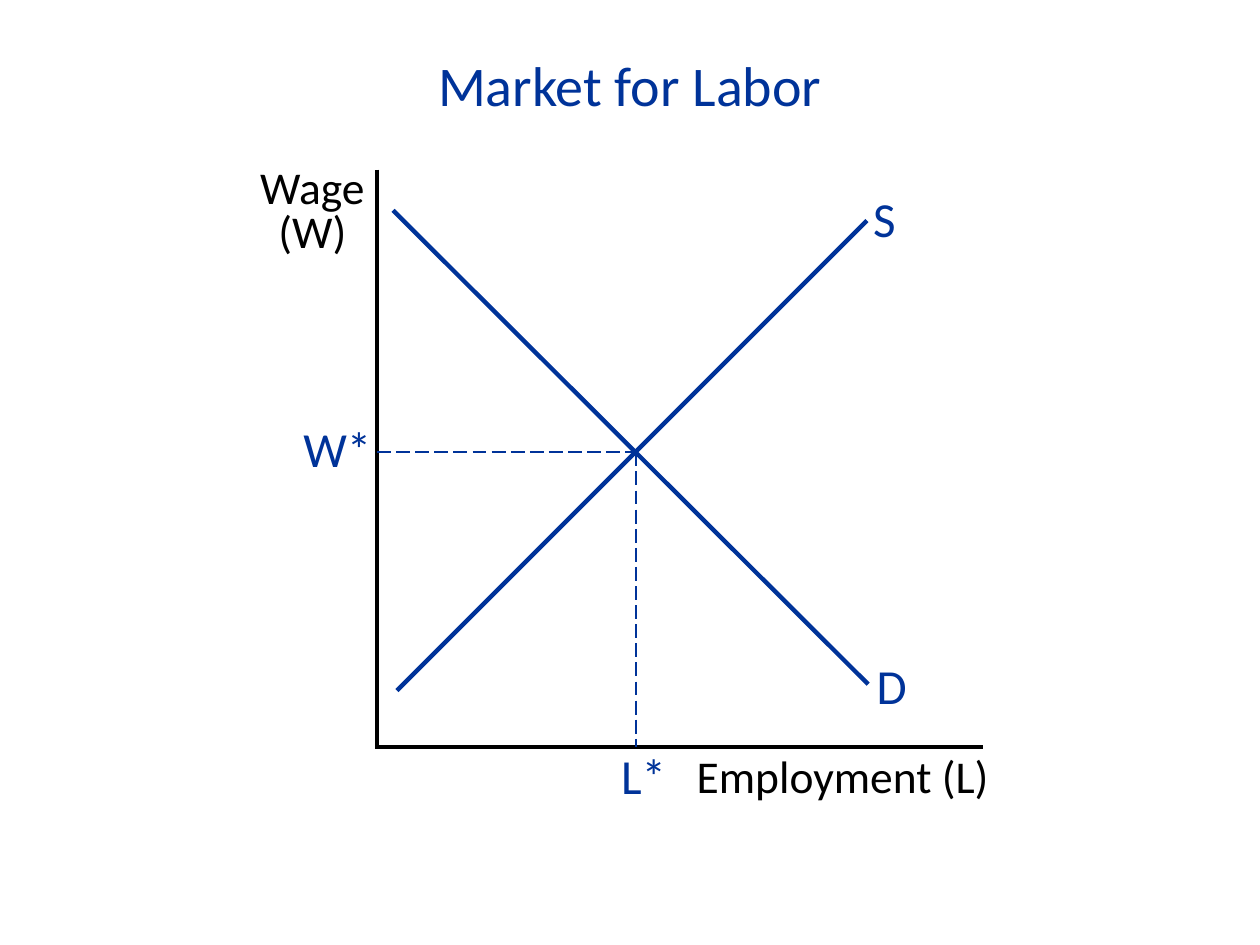
from pptx import Presentation
from pptx.dml.color import RGBColor
from pptx.enum.dml import MSO_LINE
from pptx.enum.shapes import MSO_CONNECTOR
from pptx.enum.text import MSO_ANCHOR, PP_ALIGN
from pptx.oxml.ns import qn
from pptx.util import Pt
from lxml.etree import SubElement

COLORS = {"axis": "000000", "curve": "003399", "paper": "FFFFFF"}
FONT = "Calibri"


def add_line(slide, start, end, color, weight=2.5, dash=None):
    """Draw a straight line between two points."""
    line = slide.shapes.add_connector(
        MSO_CONNECTOR.STRAIGHT, *(Pt(value) for value in (*start, *end))
    )
    line.line.color.rgb = RGBColor.from_string(COLORS[color])
    line.line.width = Pt(weight)
    if dash is not None:
        line.line.dash_style = dash
    SubElement(line._element.spPr, qn("a:effectLst"))


def add_label(slide, box, rows, size, color, align=PP_ALIGN.LEFT,
              spacing=1.0, anchor=MSO_ANCHOR.TOP):
    """Write rows of text, one paragraph each, in a box."""
    label = slide.shapes.add_textbox(*(Pt(value) for value in box))
    frame = label.text_frame
    frame.word_wrap = True
    frame.vertical_anchor = anchor
    for index, row in enumerate(rows):
        paragraph = frame.add_paragraph() if index else frame.paragraphs[0]
        paragraph.alignment = align
        paragraph.line_spacing = spacing
        run = paragraph.add_run()
        run.text = row
        run.font.name = FONT
        run.font.size = Pt(size)
        run.font.color.rgb = RGBColor.from_string(COLORS[color])


def add_title(slide, box):
    """Write the centred slide title."""
    add_label(slide, box, ["Market for Labor"], 32, "curve",
              align=PP_ALIGN.CENTER, anchor=MSO_ANCHOR.MIDDLE)


def add_labor_market(slide, box):
    """Draw the axes, the supply and demand curves and their equilibrium."""
    left, top, width, height = box

    def at(x, y):
        """Shift a point into the diagram."""
        return left + x, top + y

    equilibrium = (148, 161.5)
    add_line(slide, at(0, 0), at(0, height + 1.25), "axis")
    add_line(slide, at(0, height), at(width, height), "axis")
    add_line(slide, at(11.3, 297.6), at(279.9, 29), "curve")
    add_line(slide, at(9.1, 23.2), at(280.6, 294), "curve")
    add_line(slide, at(0, equilibrium[1]), at(*equilibrium), "curve", 1,
             MSO_LINE.LONG_DASH)
    add_line(slide, at(*equilibrium), at(equilibrium[0], height), "curve", 1,
             MSO_LINE.LONG_DASH)

    add_label(slide, (*at(-78.7, -3.4), 83.5, 57.6), ["Wage", "(W)"], 26,
              "axis", align=PP_ALIGN.CENTER, spacing=0.8)
    add_label(slide, (*at(175.5, 327), 188, 39), ["Employment (L)"], 26, "axis")
    for x, y, name, spacing in (
        (276.3, 7.4, "S", 1.0),
        (278.4, 273.8, "D", 1.0),
        (-49.2, 145, "W*", 0.8),
        (132.3, 332, "L*", 0.8),
    ):
        add_label(slide, (*at(x, y), 60, 38), [name], 28, "curve",
                  spacing=spacing)


def main():
    """Build and save the slide."""
    deck = Presentation()
    deck.slide_width, deck.slide_height = Pt(720), Pt(540)
    slide = deck.slides.add_slide(deck.slide_layouts[6])
    slide.background.fill.solid()
    slide.background.fill.fore_color.rgb = RGBColor.from_string(COLORS["paper"])
    add_title(slide, (50, 25, 620, 46))
    add_labor_market(slide, (215.5, 97, 346, 330))
    deck.save("out.pptx")


if __name__ == "__main__":
    main()
